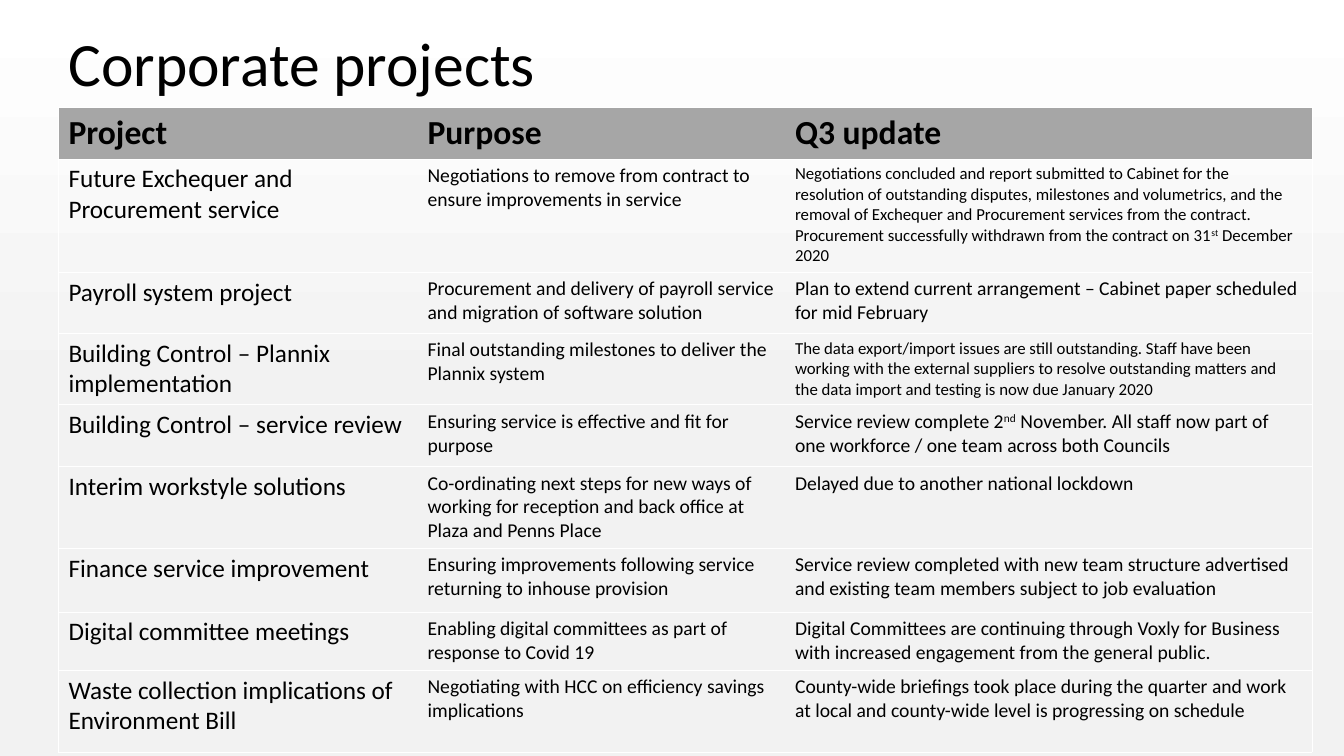
from lxml import etree
from pptx import Presentation
from pptx.dml.color import RGBColor
from pptx.enum.text import MSO_ANCHOR
from pptx.oxml.ns import qn
from pptx.util import Pt

MIDDLE = MSO_ANCHOR.MIDDLE
TOP = MSO_ANCHOR.TOP
BLACK = RGBColor(0x00, 0x00, 0x00)
WHITE = RGBColor(0xFF, 0xFF, 0xFF)
PALE_GREY = RGBColor(0xF2, 0xF2, 0xF2)
HEADER_GREY = RGBColor(0xA6, 0xA6, 0xA6)
FONT = "Calibri"
BORDER_WIDTH = Pt(0.5)

TITLE_BOX = (41.76, 7.92, 828, 79.2)
TABLE_BOX = (41.76, 77, 895.5, 459)
COLUMN_WIDTHS = (256.5, 262.5, 376.5)
ROW_HEIGHTS = (36, 81, 43.5, 50.5, 44, 58.5, 45.5, 41.5, 58.5)

HEADINGS = ("Project", "Purpose", "Q3 update")
PROJECTS = (
    ("Future Exchequer and Procurement service",
     "Negotiations to remove from contract to ensure improvements in service",
     "Negotiations concluded and report submitted to Cabinet for the resolution of "
     "outstanding disputes, milestones and volumetrics, and the removal of Exchequer "
     "and Procurement services from the contract. Procurement successfully withdrawn "
     "from the contract on 31^st^ December 2020", 12),
    ("Payroll system project",
     "Procurement and delivery of payroll service and migration of software solution",
     "Plan to extend current arrangement – Cabinet paper scheduled for mid February", 14),
    ("Building Control – Plannix implementation",
     "Final outstanding milestones to deliver the Plannix system",
     "The data export/import issues are still outstanding. Staff have been working with "
     "the external suppliers to resolve outstanding matters and the data import and "
     "testing is now due January 2020", 12),
    ("Building Control – service review",
     "Ensuring service is effective and fit for purpose",
     "Service review complete 2^nd^ November. All staff now part of one workforce / "
     "one team across both Councils", 14),
    ("Interim workstyle solutions",
     "Co-ordinating next steps for new ways of working for reception and back office "
     "at Plaza and Penns Place",
     "Delayed due to another national lockdown", 14),
    ("Finance service improvement",
     "Ensuring improvements following service returning to inhouse provision",
     "Service review completed with new team structure advertised and existing team "
     "members subject to job evaluation", 14),
    ("Digital committee meetings",
     "Enabling digital committees as part of response to Covid 19",
     "Digital Committees are continuing through Voxly for Business with increased "
     "engagement from the general public.", 14),
    ("Waste collection implications of Environment Bill",
     "Negotiating with HCC on efficiency savings implications",
     "County-wide briefings took place during the quarter and work at local and "
     "county-wide level is progressing on schedule", 14),
)


def write_text(frame, text, *, size, bold=False, anchor=TOP, line_spacing=None):
    """Fill a text frame, raising the parts between carets as superscript."""
    frame.word_wrap = True
    frame.vertical_anchor = anchor
    para = frame.paragraphs[0]
    para.line_spacing = line_spacing
    for index, part in enumerate(text.split("^")):
        span = para.add_run()
        span.text = part
        span.font.name = FONT
        span.font.size = Pt(size)
        span.font.bold = bold
        span.font.color.rgb = BLACK
        if index % 2:
            span._r.get_or_add_rPr().set("baseline", "30000")


def set_borders(cell, visible_sides):
    """Draw white lines on the named sides of a cell and clear the others."""
    properties = cell._tc.get_or_add_tcPr()
    for index, side in enumerate("LRTB"):
        line = etree.Element(qn(f"a:ln{side}"), w=str(BORDER_WIDTH))
        if side in visible_sides:
            fill = etree.SubElement(line, qn("a:solidFill"))
            etree.SubElement(fill, qn("a:srgbClr"), val=str(WHITE))
        else:
            etree.SubElement(line, qn("a:noFill"))
        properties.insert(index, line)


def paint_background(page):
    """Fade the page from white to pale grey, top to bottom."""
    fill = page.background.fill
    fill.gradient()
    fill.gradient_angle = 270
    for stop, color, position in zip(fill.gradient_stops, (WHITE, PALE_GREY), (0, 0.54)):
        stop.color.rgb = color
        stop.position = position


def add_title(page, box):
    """Place the page title in its box."""
    title = page.shapes.add_textbox(*map(Pt, box))
    write_text(title.text_frame, "Corporate projects", size=44, anchor=MIDDLE,
               line_spacing=0.9)


def add_project_table(page, box):
    """Place the table of projects, one row each below a grey header."""
    table = page.shapes.add_table(len(ROW_HEIGHTS), len(COLUMN_WIDTHS),
                                  *map(Pt, box)).table
    table.horz_banding = False
    for column, width in zip(table.columns, COLUMN_WIDTHS):
        column.width = Pt(width)
    for row, height in zip(table.rows, ROW_HEIGHTS):
        row.height = Pt(height)

    outer_sides = ("LTB", "TB", "RTB")
    for cell, heading, sides in zip(table.rows[0].cells, HEADINGS, outer_sides):
        write_text(cell.text_frame, heading, size=24, bold=True)
        cell.fill.solid()
        cell.fill.fore_color.rgb = HEADER_GREY
        set_borders(cell, sides)
    for row_index, (*texts, update_size) in enumerate(PROJECTS, start=1):
        sizes = (18, 14, update_size)
        cells = table.rows[row_index].cells
        for cell, text, size, sides in zip(cells, texts, sizes, outer_sides):
            write_text(cell.text_frame, text, size=size)
            cell.fill.background()
            set_borders(cell, sides)


def main():
    """Build the deck and save it."""
    deck = Presentation()
    deck.slide_width, deck.slide_height = Pt(960), Pt(540)
    page = deck.slides.add_slide(deck.slide_layouts[6])
    paint_background(page)
    add_project_table(page, TABLE_BOX)
    add_title(page, TITLE_BOX)
    deck.save("out.pptx")


if __name__ == "__main__":
    main()
